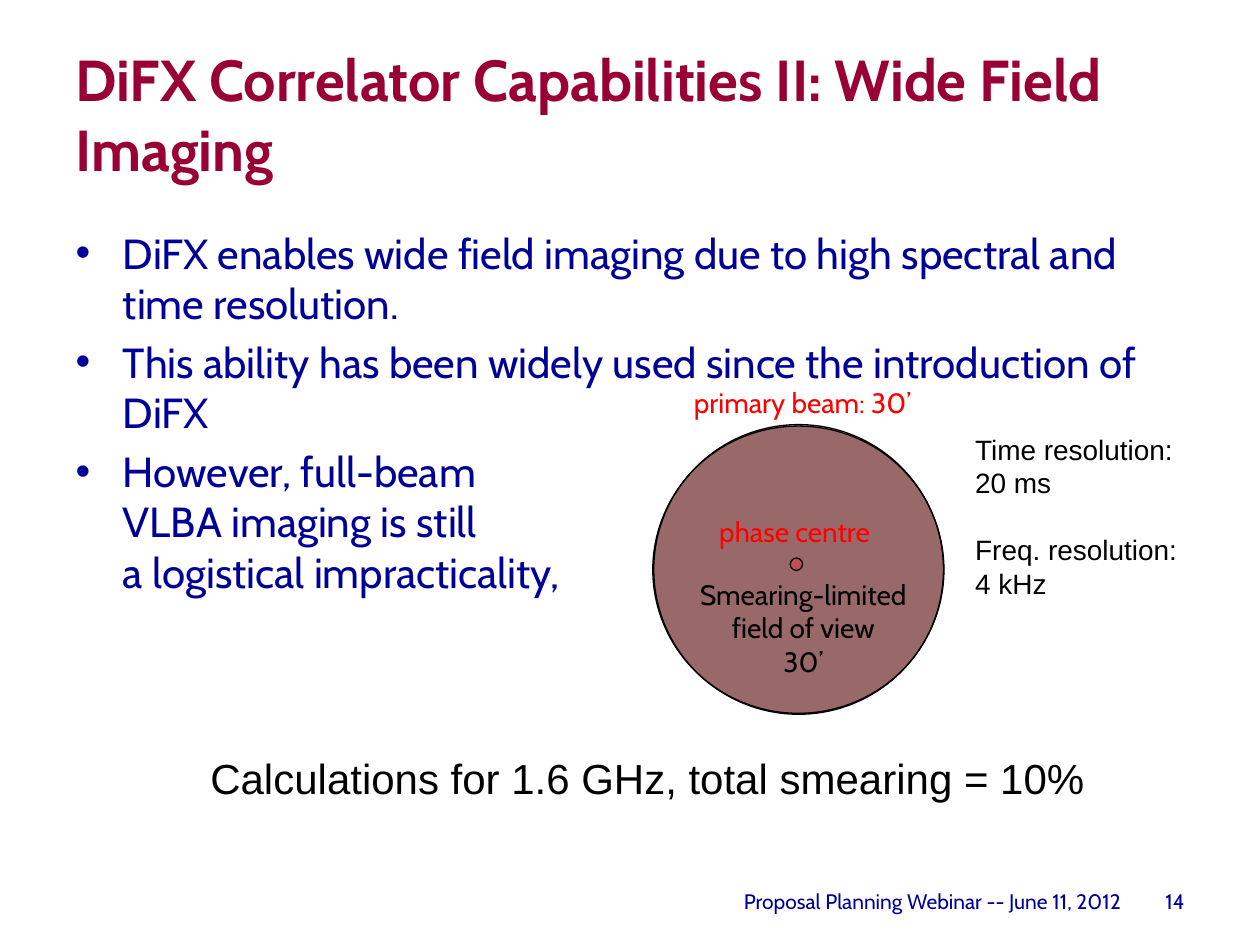
from lxml import etree
from pptx import Presentation
from pptx.dml.color import RGBColor
from pptx.enum.shapes import MSO_SHAPE
from pptx.enum.text import MSO_ANCHOR, MSO_AUTO_SIZE, PP_ALIGN
from pptx.oxml.ns import qn
from pptx.util import Cm, Pt

LEFT, CENTER, RIGHT = PP_ALIGN.LEFT, PP_ALIGN.CENTER, PP_ALIGN.RIGHT
TOP, MIDDLE = MSO_ANCHOR.TOP, MSO_ANCHOR.MIDDLE
NO_FIT = MSO_AUTO_SIZE.NONE
OVAL = MSO_SHAPE.OVAL
TITLE_AND_CONTENT = 1

COLORS = {
    "title": "990033",
    "body": "000099",
    "label": "FF0000",
    "ink": "000000",
    "centre": "C0504D",
}


class SlideBuilder:
    """Holds the style and the current slide."""

    brand_font = "Cabin"
    plain_font = "Arial"
    outline = Pt(0.75)

    def __init__(self, deck):
        self.slide = deck.slides.add_slide(deck.slide_layouts[TITLE_AND_CONTENT])

    def color(self, name):
        return RGBColor.from_string(COLORS[name])

    def fill_text(self, frame, paragraphs, size, color, font=None, bold=False,
                  align=LEFT, anchor=TOP, wrap=True, gap=0):
        frame_format = {"word_wrap": wrap, "auto_size": NO_FIT,
                        "vertical_anchor": anchor}
        for key, value in frame_format.items():
            setattr(frame, key, value)
        font_format = {"name": font or self.brand_font, "size": Pt(size),
                       "bold": bold}
        for index, words in enumerate(paragraphs):
            paragraph = frame.add_paragraph() if index else frame.paragraphs[0]
            paragraph.text = words
            paragraph.alignment = align
            paragraph.space_before = Pt(gap if index else 0)
            for run in paragraph.runs:
                for key, value in font_format.items():
                    setattr(run.font, key, value)
                run.font.color.rgb = self.color(color)

    def placeholder(self, index, box, paragraphs, **style):
        holder = self.slide.placeholders[index]
        for key, value in zip(("left", "top", "width", "height"), box):
            setattr(holder, key, Cm(value))
        self.fill_text(holder.text_frame, paragraphs, **style)

    def text(self, box, paragraphs, **style):
        area = self.slide.shapes.add_textbox(*map(Cm, box))
        self.fill_text(area.text_frame, paragraphs, **style)

    def circle(self, box, color, opacity=100):
        disc = self.slide.shapes.add_shape(OVAL, *map(Cm, box))
        disc.shadow.inherit = False
        disc.fill.solid()
        disc.fill.fore_color.rgb = self.color(color)
        disc.line.color.rgb = self.color("ink")
        disc.line.width = self.outline
        if opacity < 100:
            fill_color = disc.element.spPr.find(qn("a:solidFill"))[0]
            alpha = etree.SubElement(fill_color, qn("a:alpha"))
            alpha.set("val", str(opacity * 1000))


def main():
    deck = Presentation()
    deck.slide_width, deck.slide_height = Cm(25.4), Cm(19.05)
    page = SlideBuilder(deck)

    # Title and bullets
    page.placeholder(0, (1.27, 0.76, 22.86, 3.18),
                     ["DiFX Correlator Capabilities II: Wide Field Imaging"],
                     size=33, color="title", bold=True)
    page.placeholder(1, (1.27, 4.45, 22.86, 12.57), [
        "DiFX enables wide field imaging due to high spectral and time resolution.",
        "This ability has been widely used since the introduction of DiFX",
        "However, full-beam\vVLBA imaging is still\va logistical impracticality,",
    ], size=24, color="body", gap=4.8)

    # Footer and page number
    footer = {"size": 12, "color": "body", "align": RIGHT, "anchor": MIDDLE}
    page.text((8.69, 17.65, 14.17, 1.02),
              ["Proposal Planning Webinar -- June 11, 2012"], **footer)
    page.text((22.86, 17.65, 1.27, 1.02), ["14"], **footer)

    # Primary beam, field of view and phase centre
    label = {"size": 16, "color": "label", "wrap": False}
    page.circle((13.18, 8.56, 5.84, 5.84), "label", opacity=31)
    page.text((13.74, 7.65, 5.03, 0.94), ["primary beam: 30’"], **label)
    page.circle((13.16, 8.59, 5.87, 5.79), "ink", opacity=40)
    page.text((13.82, 11.51, 4.75, 2.29),
              ["Smearing-limited\vfield of view\v30’"],
              size=16, color="ink", align=CENTER, wrap=False)
    page.circle((15.93, 11.25, 0.25, 0.25), "centre")
    page.text((14.25, 10.24, 3.78, 0.94), ["phase centre"], **label)

    # Resolution and calculation notes
    note = {"color": "ink", "font": page.plain_font, "wrap": False}
    page.text((19.41, 8.59, 4.62, 5.05),
              ["Time resolution:\v20 ms", "Freq. resolution:\v4 kHz"],
              size=16, gap=19, **note)
    page.text((3.99, 15.04, 18.14, 1.27),
              ["Calculations for 1.6 GHz, total smearing = 10%"],
              size=24, **note)

    deck.save("out.pptx")


if __name__ == "__main__":
    main()
